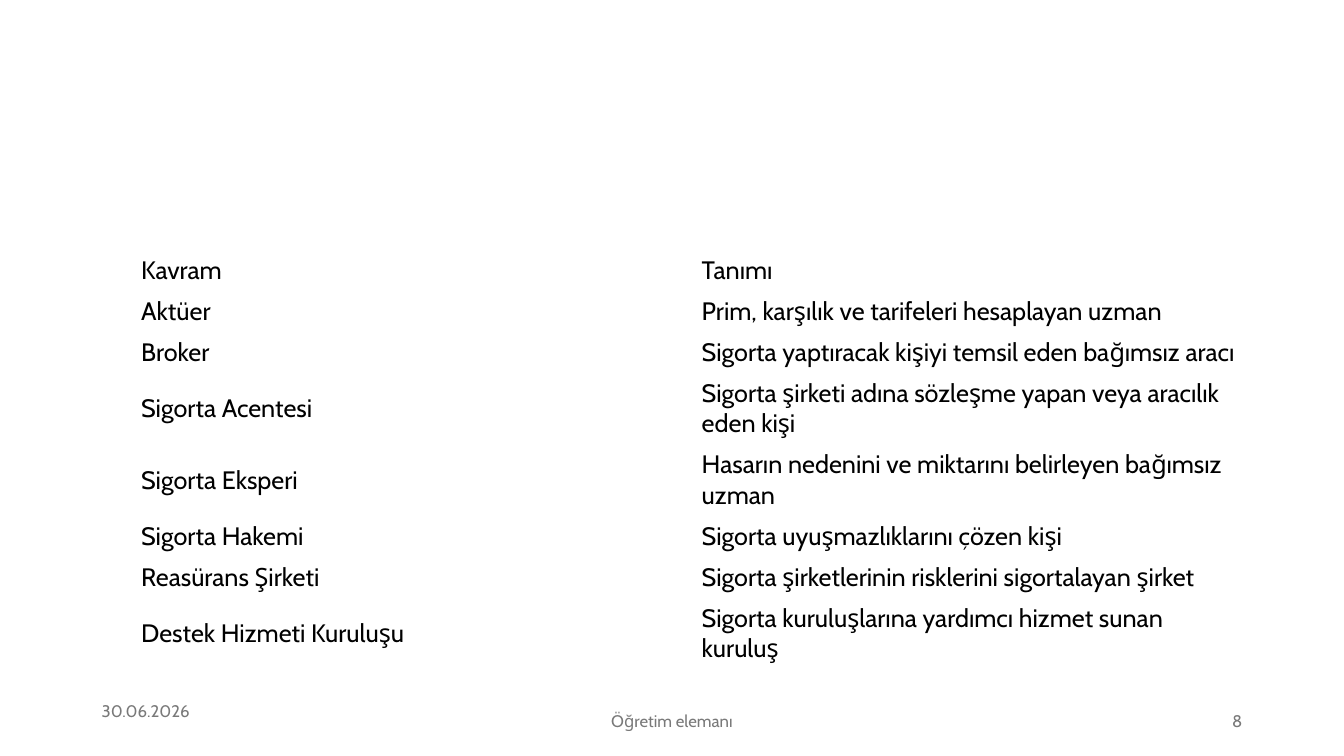
from pptx import Presentation
from pptx.dml.color import RGBColor
from pptx.enum.text import MSO_ANCHOR, PP_ALIGN
from pptx.util import Inches, Pt

FONT = "Cabin"
BLACK = RGBColor(0x00, 0x00, 0x00)
GRAY = RGBColor(0x79, 0x79, 0x79)

WIDTH, HEIGHT = 13.33, 7.5
RIGHT = 12.42
TABLE_LEFT, TABLE_TOP = 1.3, 2.48
LINE = 0.4
FOOTER_TOP = 6.95
SIDE_WIDTH, CENTER_WIDTH = 3, 4.5

TERMS = [
    ("Kavram", "Tanımı"),
    ("Aktüer", "Prim, karşılık ve tarifeleri hesaplayan uzman"),
    ("Broker", "Sigorta yaptıracak kişiyi temsil eden bağımsız aracı"),
    ("Sigorta Acentesi", "Sigorta şirketi adına sözleşme yapan veya aracılık eden kişi"),
    ("Sigorta Eksperi", "Hasarın nedenini ve miktarını belirleyen bağımsız uzman"),
    ("Sigorta Hakemi", "Sigorta uyuşmazlıklarını çözen kişi"),
    ("Reasürans Şirketi", "Sigorta şirketlerinin risklerini sigortalayan şirket"),
    ("Destek Hizmeti Kuruluşu", "Sigorta kuruluşlarına yardımcı hizmet sunan kuruluş"),
]


def write(tf, text, size, color, align=PP_ALIGN.LEFT):
    tf.text = text
    tf.word_wrap = True
    p = tf.paragraphs[0]
    p.alignment = align
    font = p.runs[0].font
    font.name, font.size, font.color.rgb = FONT, Pt(size), color


def add_terms_table(s):
    """Add the two equal columns; rows grow where a definition wraps."""
    frame = s.shapes.add_table(
        len(TERMS), 2, Inches(TABLE_LEFT), Inches(TABLE_TOP),
        Inches(RIGHT - TABLE_LEFT), Inches(LINE * len(TERMS)))
    table = frame.table
    table.first_row = table.horz_banding = False
    for row, texts in zip(table.rows, TERMS):
        for cell, text in zip(row.cells, texts):
            cell.fill.background()
            cell.vertical_anchor = MSO_ANCHOR.MIDDLE
            write(cell.text_frame, text, 18, BLACK)


def add_footer(s, text, left, width, align, anchor=MSO_ANCHOR.MIDDLE):
    box = s.shapes.add_textbox(
        Inches(left), Inches(FOOTER_TOP), Inches(width), Inches(LINE))
    tf = box.text_frame
    write(tf, text, 12, GRAY, align)
    tf.vertical_anchor = anchor
    tf.margin_top = tf.margin_bottom = 0


def main():
    prs = Presentation()
    prs.slide_width, prs.slide_height = Inches(WIDTH), Inches(HEIGHT)
    s = prs.slides.add_slide(prs.slide_layouts[6])
    add_terms_table(s)
    add_footer(s, "30.06.2026", WIDTH - RIGHT, SIDE_WIDTH,
               PP_ALIGN.LEFT, MSO_ANCHOR.TOP)
    add_footer(s, "Öğretim elemanı", (WIDTH - CENTER_WIDTH) / 2,
               CENTER_WIDTH, PP_ALIGN.CENTER)
    add_footer(s, "8", RIGHT - SIDE_WIDTH, SIDE_WIDTH, PP_ALIGN.RIGHT)
    prs.save("out.pptx")


if __name__ == "__main__":
    main()
